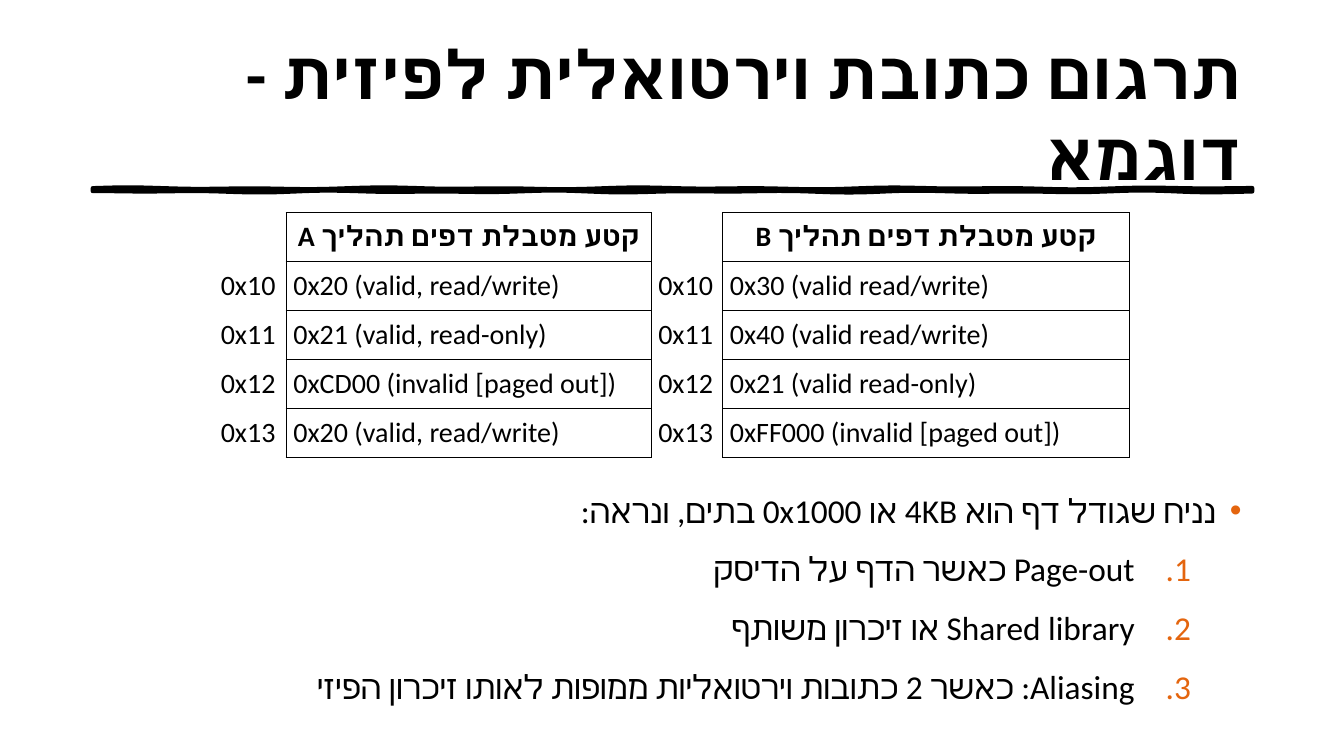
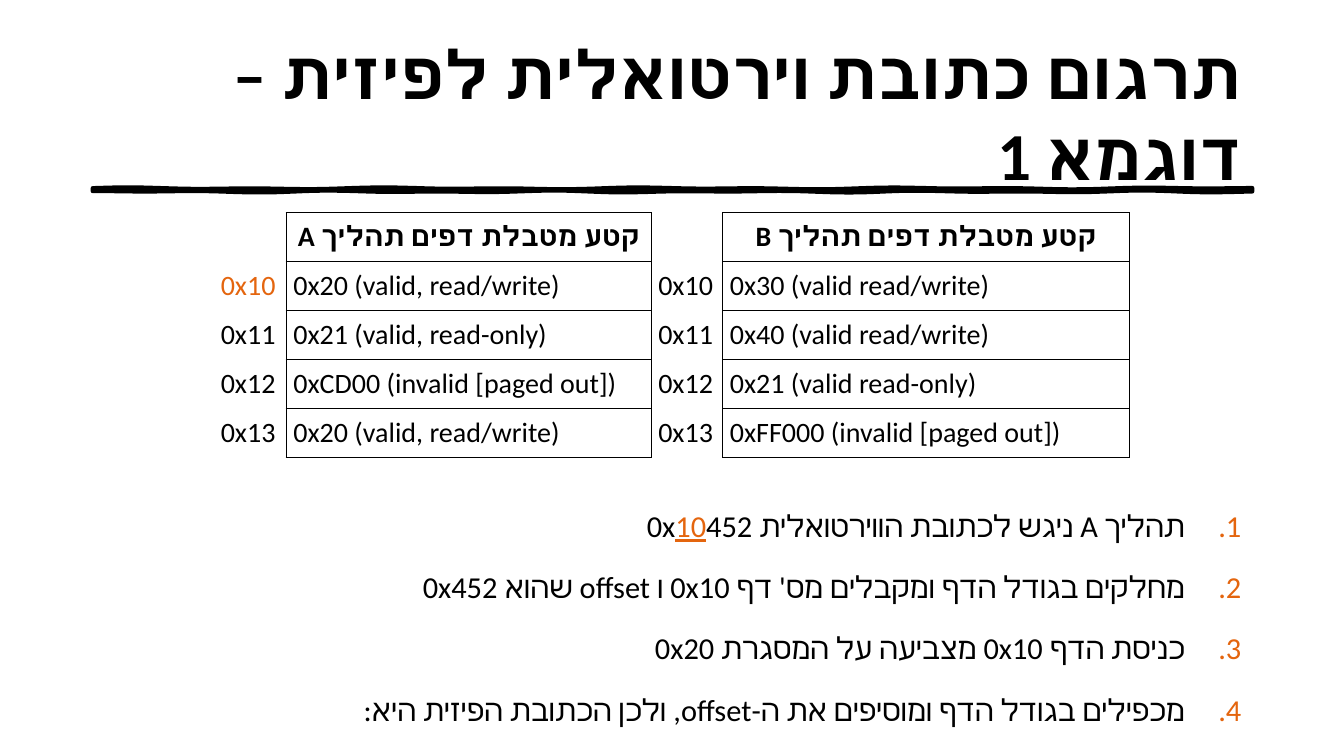
import math

from lxml import etree
from pptx import Presentation
from pptx import util as u
from pptx.dml.color import RGBColor
from pptx.enum import text
from pptx.oxml import ns

BLACK = RGBColor(0x00, 0x00, 0x00)
ORANGE = RGBColor(0xE4, 0x65, 0x0E)
FONT = "Calibri"

PAGE_TABLE = [
    ["", "קטע מטבלת דפים תהליך A", "", "קטע מטבלת דפים תהליך B"],
    ["0x10", "0x20 (valid, read/write)", "0x10", "0x30 (valid read/write)"],
    ["0x11", "0x21 (valid, read-only)", "0x11", "0x40 (valid read/write)"],
    ["0x12", "0xCD00 (invalid [paged out])", "0x12", "0x21 (valid read-only)"],
    ["0x13", "0x20 (valid, read/write)", "0x13", "0xFF000 (invalid [paged out])"],
]
COLUMN_WIDTHS = [0.72, 3.62, 0.71, 4.03]

BULLET = dict(level=0, margin=0.25, indent=-0.25, before=10, marker="•", marker_font="Arial")
SUBSTEP = dict(level=1, margin=1.06, indent=-0.56, before=5, marker=None, marker_font=FONT)
STEP = dict(level=0, margin=0.56, indent=-0.56, before=10, marker=None, marker_font="Arial")


def set_attributes(target, values):
    for name, value in values.items():
        setattr(target, name, value)


def add_element(parent, tag, **attributes):
    element = etree.SubElement(parent, ns.qn(tag))
    for name, value in attributes.items():
        element.set(name, str(value))
    return element


class Deck:
    def __init__(self):
        self.presentation = Presentation()
        set_attributes(self.presentation, dict(slide_width=u.Inches(13.33), slide_height=u.Inches(7.5)))
        self.slide = None

    def add_slide(self, title):
        self.slide = self.presentation.slides.add_slide(self.presentation.slide_layouts[5])
        self.add_brush_line()
        self.add_title(title)

    def add_run(self, paragraph, words, size, color=BLACK, **styles):
        run = paragraph.add_run()
        run.text = words
        set_attributes(run.font, dict(name=FONT, size=u.Pt(size), **styles))
        run.font.color.rgb = color
        add_element(run._r.get_or_add_rPr(), "a:cs", typeface=FONT)

    def set_right_to_left(self, paragraph, alignment):
        paragraph.alignment = alignment
        properties = paragraph._p.get_or_add_pPr()
        properties.set("rtl", "1")
        return properties

    def add_title(self, words):
        title = self.slide.shapes.title
        set_attributes(title, dict(left=u.Inches(0.92), top=u.Inches(0.4),
                                   width=u.Inches(11.5), height=u.Inches(1.45)))
        set_attributes(title.text_frame, dict(word_wrap=True, auto_size=text.MSO_AUTO_SIZE.NONE,
                                              vertical_anchor=text.MSO_ANCHOR.MIDDLE))
        paragraph = title.text_frame.paragraphs[0]
        self.set_right_to_left(paragraph, text.PP_ALIGN.RIGHT)
        self.add_run(paragraph, words, 48, bold=True)

    def add_brush_line(self):
        left, width, steps = 0.92, 11.5, 115
        xs = [left + width * step / steps for step in range(steps + 1)]
        upper = [(x, 1.87 + 0.01 * math.sin(3.7 * x) * math.sin(1.3 * x)) for x in xs]
        lower = [(x, 1.9 + 0.01 * math.sin(4.3 * x) * math.cos(1.1 * x)) for x in reversed(xs)]
        points = [(u.Inches(x), u.Inches(y)) for x, y in upper + lower]
        builder = self.slide.shapes.build_freeform(*points[0])
        builder.add_line_segments(points[1:], close=True)
        line = builder.convert_to_shape()
        line.shadow.inherit = False
        line.fill.solid()
        line.fill.fore_color.rgb = BLACK
        line.line.color.rgb = BLACK
        line.line.width = u.Pt(3)

    def add_list(self, top, size, items):
        box = self.slide.shapes.add_textbox(u.Inches(0.26), u.Inches(top), u.Inches(12.15), u.Inches(2.4))
        frame = box.text_frame
        frame.word_wrap = True
        for index, (style, runs) in enumerate(items):
            paragraph = frame.add_paragraph() if index else frame.paragraphs[0]
            set_attributes(paragraph, dict(level=style["level"], line_spacing=1.3,
                                           space_before=u.Pt(style["before"])))
            properties = self.set_right_to_left(paragraph, text.PP_ALIGN.RIGHT)
            properties.set("marL", str(u.Inches(style["margin"])))
            properties.set("indent", str(u.Inches(style["indent"])))
            add_element(add_element(properties, "a:buClr"), "a:srgbClr", val=ORANGE)
            add_element(properties, "a:buFont", typeface=style["marker_font"])
            if style["marker"]:
                add_element(properties, "a:buChar", char=style["marker"])
            else:
                add_element(properties, "a:buAutoNum", type="arabicPeriod")
            for words, styles in runs:
                self.add_run(paragraph, words, size, **styles)

    def set_borders(self, cell, visible):
        properties = cell._tc.get_or_add_tcPr()
        for position, side in enumerate("LRTB"):
            border = add_element(properties, "a:ln" + side, w=u.Pt(1))
            if side in visible:
                add_element(add_element(border, "a:solidFill"), "a:srgbClr", val=BLACK)
            else:
                add_element(border, "a:noFill")
            properties.insert(position, border)

    def add_page_table(self, highlighted=()):
        frame = self.slide.shapes.add_table(len(PAGE_TABLE), len(COLUMN_WIDTHS), u.Inches(2.12),
                                            u.Inches(2.11), u.Inches(sum(COLUMN_WIDTHS)), u.Inches(2.43))
        table = frame.table
        set_attributes(table, dict(first_row=False, horz_banding=False))
        for column, width in zip(table.columns, COLUMN_WIDTHS):
            column.width = u.Inches(width)
        margins = {f"margin_{side}": u.Inches(0.07) for side in ("left", "right", "top", "bottom")}
        for row, values in enumerate(PAGE_TABLE):
            for column, words in enumerate(values):
                cell = table.cell(row, column)
                set_attributes(cell, margins)
                cell.fill.background()
                self.set_borders(cell, ("R", "LRTB", "LR", "LRTB")[column])
                if not words:
                    continue
                paragraph = cell.text_frame.paragraphs[0]
                if row == 0:
                    self.set_right_to_left(paragraph, text.PP_ALIGN.CENTER)
                color = ORANGE if (row, column) in highlighted else BLACK
                self.add_run(paragraph, words, 20, color, bold=row == 0)


def main():
    deck = Deck()

    deck.add_slide("תרגום כתובת וירטואלית לפיזית - דוגמא")
    deck.add_list(4.69, 23.8, [
        (BULLET, [("נניח שגודל דף הוא 4KB או 0x1000 בתים, ונראה:", {})]),
        (SUBSTEP, [("Page-out כאשר הדף על הדיסק", {})]),
        (SUBSTEP, [("Shared library או זיכרון משותף", {})]),
        (SUBSTEP, [("Aliasing: כאשר 2 כתובות וירטואליות ממופות לאותו זיכרון הפיזי", {})]),
    ])
    deck.add_page_table()

    deck.add_slide("תרגום כתובת וירטואלית לפיזית – דוגמא 1")
    deck.add_list(4.87, 21.7, [
        (STEP, [("תהליך A ניגש לכתובת הווירטואלית 0x", {}),
                ("10", dict(color=ORANGE, underline=True)),
                ("452", {})]),
        (STEP, [("מחלקים בגודל הדף ומקבלים מס' דף 0x10 ו offset שהוא 0x452", {})]),
        (STEP, [("כניסת הדף 0x10 מצביעה על המסגרת 0x20", {})]),
        (STEP, [("מכפילים בגודל הדף ומוסיפים את ה-offset, ולכן הכתובת הפיזית היא:", {})]),
    ])
    deck.add_page_table(highlighted={(1, 0)})

    deck.presentation.save("out.pptx")


if __name__ == "__main__":
    main()
